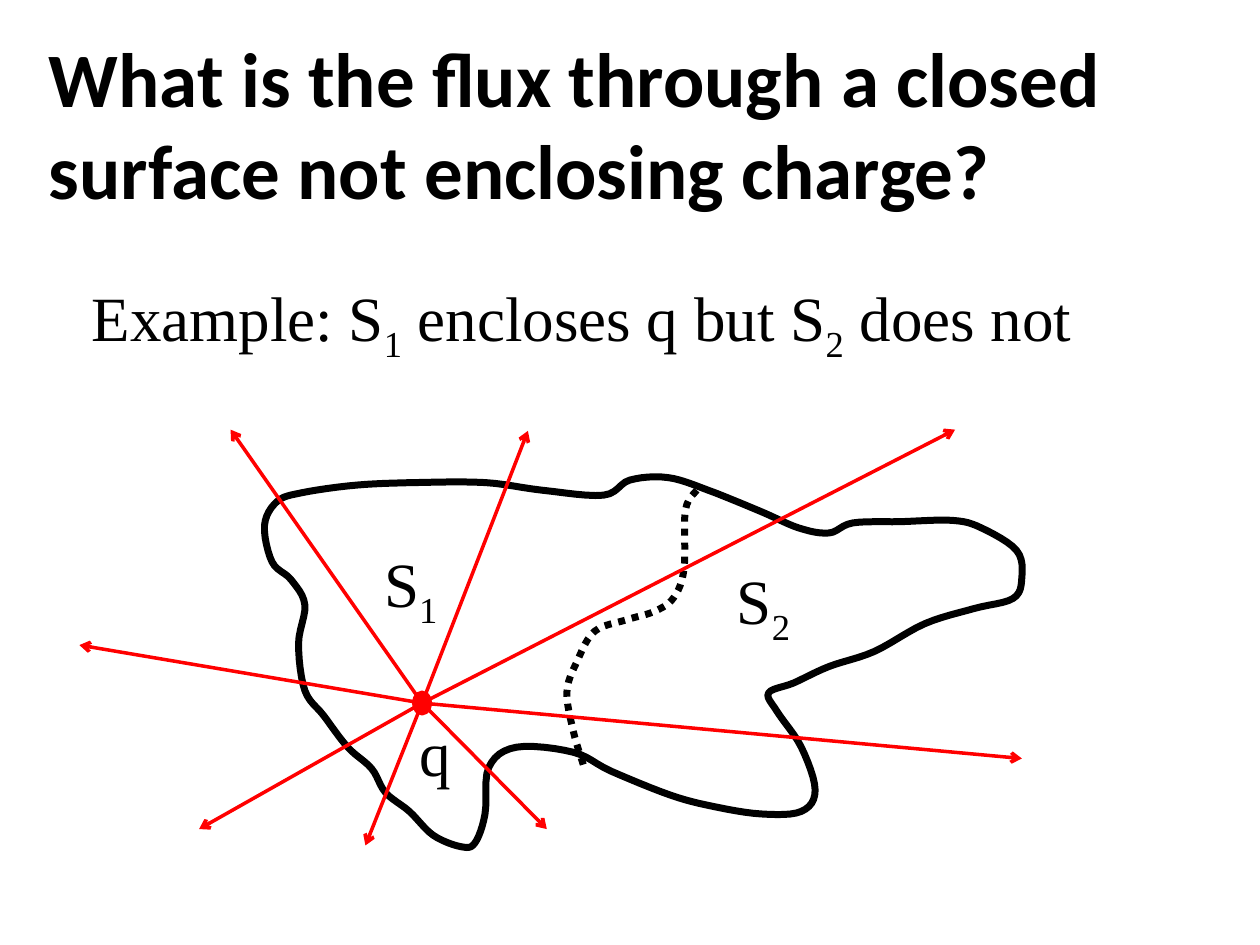
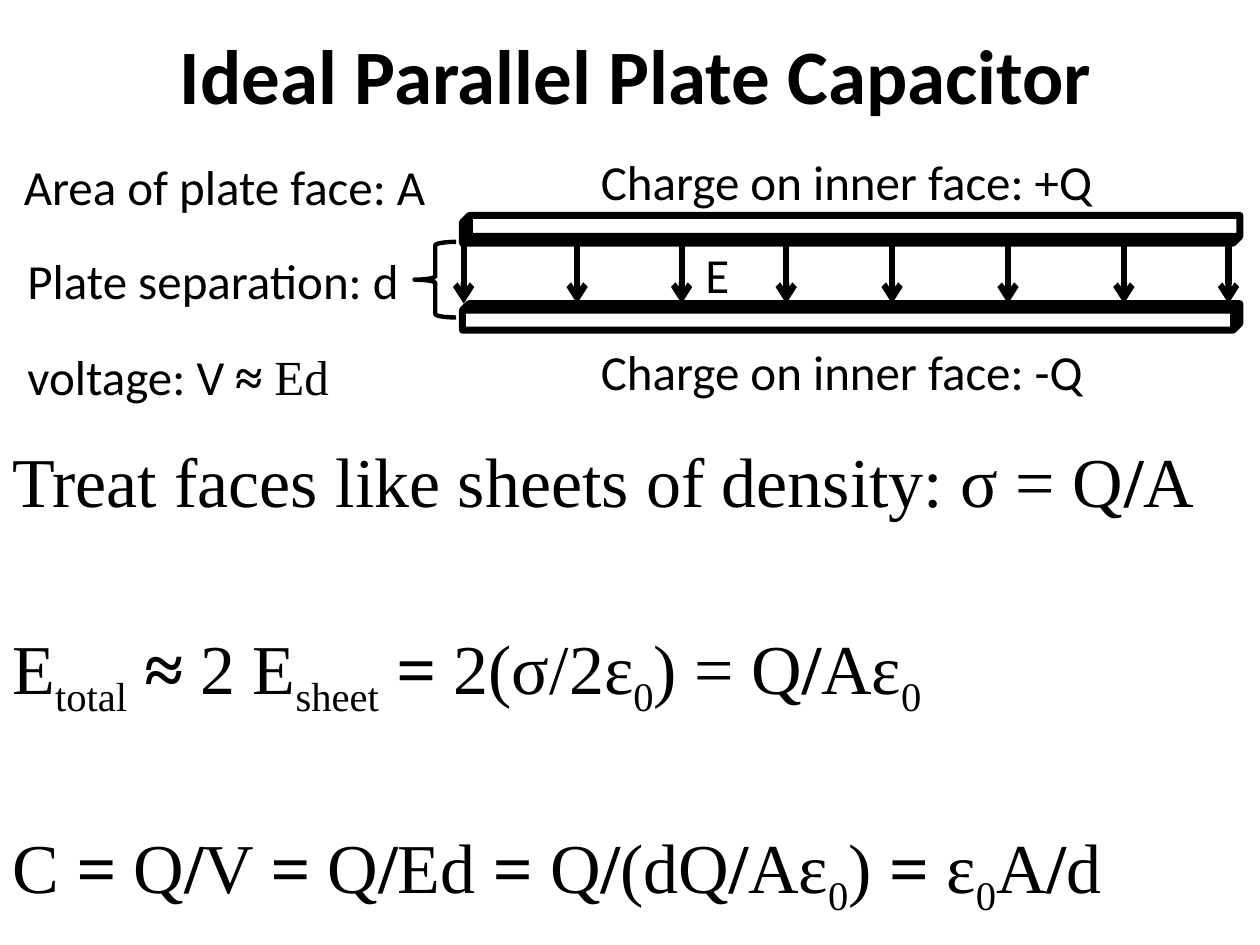
from itertools import accumulate

from lxml import etree
from pptx import Presentation
from pptx.dml.color import RGBColor
from pptx.enum import dml, shapes
from pptx.oxml.ns import qn
from pptx.util import Inches, Pt

BLACK = RGBColor(0, 0, 0)
WHITE = RGBColor(255, 255, 255)
RED = RGBColor(255, 0, 0)
SANS, SERIF = "Calibri", "Times New Roman"
TITLE = {"size": 44, "bold": True}
FORMULA = {"size": 36, "font": SERIF}
LABEL = {"size": 28}
EQUATION = {"size": 40, "font": SERIF, "before": 47, "after": 12}
OUTLINE_WIDTH, RAY_WIDTH, FIELD_WIDTH, BRACE_WIDTH = 4, 2, 3.5, 2.5


def write(page, area, *lines, size, font=SANS, bold=False, before=0, after=0):
    """Runs are split by |; a leading _ means subscript, * bold serif, ~ serif."""
    box = page.shapes.add_textbox(*map(Inches, area))
    frame = box.text_frame
    frame.word_wrap = True
    for index, line in enumerate(lines):
        para = frame.add_paragraph() if index else frame.paragraphs[0]
        para.space_before = Pt(before if index else 0)
        para.space_after = Pt(after)
        for part in line.split("|"):
            mark = part[0] if part[0] in "_*~" else ""
            span = para.add_run()
            span.text = part[len(mark):]
            span.font.size = Pt(size)
            span.font.name = SERIF if mark in ("*", "~") else font
            span.font.bold = bold or mark == "*"
            span.font.color.rgb = BLACK
            if mark == "_":
                span.font._element.set("baseline", "-25000")


def draw_arrow(page, start, end, color, width):
    arrow = page.shapes.add_connector(
        shapes.MSO_CONNECTOR.STRAIGHT, *map(Inches, (*start, *end)))
    arrow.line.color.rgb = color
    arrow.line.width = Pt(width)
    etree.SubElement(arrow.line._get_or_add_ln(), qn("a:tailEnd"), type="arrow")
    etree.SubElement(arrow._element.spPr, qn("a:effectLst"))


deck = Presentation()
deck.slide_width, deck.slide_height = Inches(10), Inches(7.5)
blank = deck.slide_layouts[6]

# Slide 1: flux through a closed surface
page = deck.slides.add_slide(blank)

# The surface runs clockwise; only its main bends are given, side by side.
top_side = [(2.4, 3.91), (2.83, 3.85), (3.3, 3.83), (3.85, 3.83), (4.3, 3.89),
            (4.79, 3.93), (5, 3.81), (5.3, 3.79), (5.62, 3.89), (6.04, 4.06),
            (6.34, 4.19), (6.58, 4.23), (6.77, 4.15), (7.15, 4.14), (7.56, 4.13)]
right_side = [(7.79, 4.19), (8.07, 4.37), (8.11, 4.59), (8.04, 4.75), (7.73, 4.83),
              (7.34, 4.95), (6.94, 5.17), (6.58, 5.29), (6.3, 5.42), (6.1, 5.5),
              (6.17, 5.65), (6.36, 5.93), (6.47, 6.27), (6.36, 6.44)]
bottom_side = [(6.04, 6.46), (5.66, 6.4), (5.32, 6.31), (4.85, 6.12), (4.55, 5.97),
               (4.1, 5.93), (3.88, 6.09), (3.85, 6.46), (3.77, 6.69), (3.66, 6.72),
               (3.44, 6.63), (3.25, 6.44), (3.06, 6.29)]
left_side = [(2.95, 6.1), (2.76, 5.93), (2.57, 5.68), (2.42, 5.48), (2.37, 5.11),
             (2.42, 4.8), (2.31, 4.6), (2.16, 4.46), (2.1, 4.17), (2.2, 3.98)]
surface = top_side + right_side + bottom_side + left_side
divider = [(5.53, 3.89), (5.44, 4.05), (5.43, 4.51), (5.35, 4.74), (5.2, 4.85),
           (4.97, 4.92), (4.72, 5.01), (4.58, 5.25), (4.5, 5.49), (4.55, 5.8),
           (4.63, 6.07)]

# A Catmull-Rom spline rounds each stretch between two neighbouring bends.
STEPS = 6
for bends, closed in ((surface, True), (divider, False)):
    if closed:
        knots = [bends[-1], *bends, *bends[:2]]
    else:
        knots = [bends[0], *bends, bends[-1]]
    smooth = []
    for stretch in zip(knots, knots[1:], knots[2:], knots[3:]):
        for step in range(STEPS):
            t = step / STEPS
            smooth.append([
                Inches((2 * b + (c - a) * t + (2 * a - 5 * b + 4 * c - d) * t ** 2
                        + (3 * b - a - 3 * c + d) * t ** 3) / 2)
                for a, b, c, d in zip(*stretch)])
    if not closed:
        smooth.append([Inches(value) for value in bends[-1]])
    builder = page.shapes.build_freeform(*smooth[0])
    builder.add_line_segments(smooth[1:], close=closed)
    curve = builder.convert_to_shape()
    curve.shadow.inherit = False
    curve.fill.background()
    curve.line.color.rgb = BLACK
    curve.line.width = Pt(OUTLINE_WIDTH)
    if not closed:
        curve.line.dash_style = dml.MSO_LINE.ROUND_DOT

for label, left, top in (("S|_1", 2.95, 4.27), ("S|_2", 5.75, 4.41), ("q", 3.23, 5.61)):
    write(page, (left, top, 0.67, 0.71), label, **FORMULA)
write(page, (0.63, 2.16, 8.33, 0.71),
      "Example: S|_1| encloses q but S|_2| does not", **FORMULA)

# Every field ray leaves from the centre of the charge.
charge_x, charge_y = 3.35, 5.58
charge_width, charge_height = 0.13, 0.17
charge = page.shapes.add_shape(
    shapes.MSO_SHAPE.OVAL,
    Inches(charge_x - charge_width / 2), Inches(charge_y - charge_height / 2),
    Inches(charge_width), Inches(charge_height))
charge.shadow.inherit = False
charge.fill.solid()
charge.fill.fore_color.rgb = RED
charge.line.color.rgb = RED
charge.line.width = Pt(RAY_WIDTH)

ray_tips = [(1.83, 3.41), (4.19, 3.42), (7.58, 3.41), (8.11, 6.02),
            (4.34, 6.58), (2.9, 6.71), (1.58, 6.58), (0.63, 5.12)]
for tip in ray_tips:
    draw_arrow(page, (charge_x, charge_y), tip, RED, RAY_WIDTH)
write(page, (0.29, 0.19, 9.38, 2.32),
      "What is the flux through a closed surface not enclosing charge?", **TITLE)

# Slide 2: parallel plate capacitor
page = deck.slides.add_slide(blank)
write(page, (1.33, 0.17, 7.58, 0.84), "Ideal Parallel Plate Capacitor", **TITLE)

plate_left, plate_width = 3.67, 6.17
upper_plate = (plate_left, 1.71, plate_width, 0.22)
lower_plate = (plate_left, 2.41, plate_width, 0.21)
separation_brace = (3.29, 1.92, 0.33, 0.6)
for kind, area, turn, width in (
    (shapes.MSO_SHAPE.CUBE, upper_plate, 180, OUTLINE_WIDTH),
    (shapes.MSO_SHAPE.CUBE, lower_plate, 0, OUTLINE_WIDTH),
    (shapes.MSO_SHAPE.LEFT_BRACE, separation_brace, 0, BRACE_WIDTH),
):
    part = page.shapes.add_shape(kind, *map(Inches, area))
    part.shadow.inherit = False
    part.rotation = turn
    part.line.color.rgb = BLACK
    part.line.width = Pt(width)
    if kind == shapes.MSO_SHAPE.CUBE:
        part.fill.solid()
        part.fill.fore_color.rgb = WHITE
    else:
        part.fill.background()

# Field arrows cross the gap; each position adds one gap to the one before.
first_arrow = 3.68
arrow_gaps = [0.9, 0.83, 0.83, 0.84, 0.92, 0.92, 0.83]
field_top, field_bottom = 1.94, 2.41
for x in accumulate([first_arrow, *arrow_gaps]):
    draw_arrow(page, (x, field_top), (x, field_bottom), BLACK, FIELD_WIDTH)

for label, left, top, width in (
    ("Area of plate face: A", 0.09, 1.19, 3.45),
    ("Plate separation: d", 0.12, 1.94, 3.17),
    ("voltage: V |*≈ |~Ed", 0.12, 2.7, 3.17),
    ("Charge on inner face: +Q", 4.67, 1.15, 4.42),
    ("Charge on inner face: -Q", 4.67, 2.66, 4.42),
    ("E", 5.5, 1.89, 0.85),
):
    write(page, (left, top, width, 0.57), label, **LABEL)

write(page, (0, 3.42, 9.88, 3.8),
      "Treat faces like sheets of density: σ = Q|*/|A",
      "E|_total| |*≈ |2 E|_sheet| |*= |2(σ/2ε|_0|) = Q|*/|Aε|_0",
      "C |*=| Q|*/|V |*=| Q|*/|Ed |*=| Q|*/|(dQ|*/|Aε|_0|)|* = |ε|_0|A|*/|d",
      **EQUATION)

deck.save("out.pptx")
